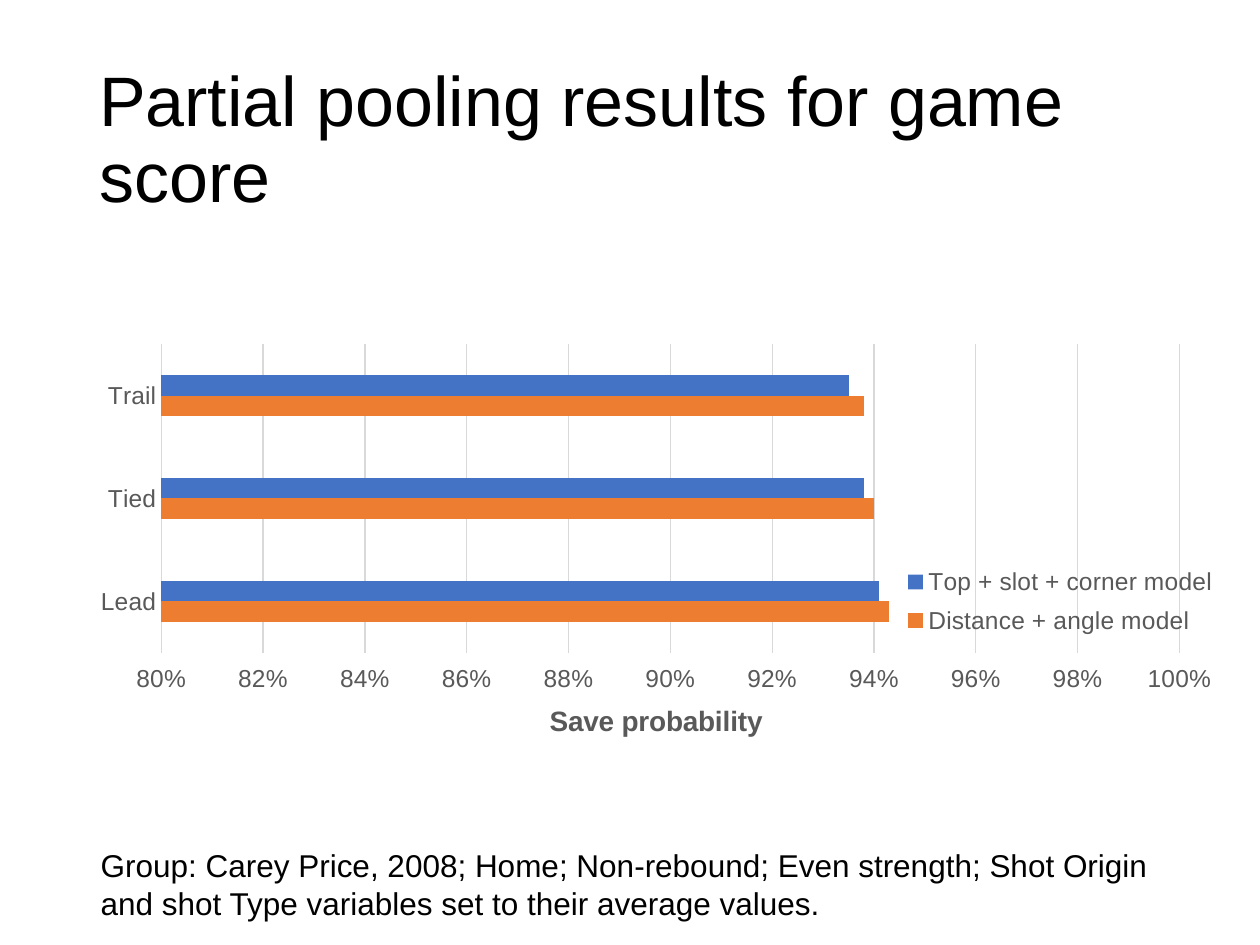
from pptx import Presentation
from pptx.chart.data import CategoryChartData as ChartData
from pptx.dml.color import RGBColor as RGB
from pptx.enum.chart import XL_CHART_TYPE as Kind, XL_LEGEND_POSITION as Side, XL_TICK_MARK as Tick
from pptx.enum.text import MSO_ANCHOR as Anchor
from pptx.oxml import parse_xml
from pptx.oxml.ns import nsdecls, qn
from pptx.util import Cm, Pt

HUES = {"ink": "000000", "gray": "595959", "grid": "D9D9D9",
        "blue": "4472C4", "orange": "ED7D31"}
FACE = "Arial"
CATS = ["Lead", "Tied", "Trail"]
SERIES = [
    ("Distance + angle model", "orange", (0.943, 0.94, 0.938)),
    ("Top + slot + corner model", "blue", (0.941, 0.938, 0.935)),
]


def hue(name):
    return RGB.from_string(HUES[name])


def style(font, size, color, face=FACE, bold=False):
    font.size = Pt(size)
    font.name = face
    font.bold = bold
    font.color.rgb = hue(color)


def add_text(slide, box, text, size, anchor=Anchor.TOP, spacing=1.0):
    frame = slide.shapes.add_textbox(*map(Cm, box)).text_frame
    frame.word_wrap = True
    frame.vertical_anchor = anchor
    frame.text = text
    para = frame.paragraphs[0]
    para.line_spacing = spacing
    style(para.runs[0].font, size, "ink")


def set_layout(parent, index, area, inner=False):
    for old in parent.findall(qn("c:layout")):
        parent.remove(old)
    target = '<c:layoutTarget val="inner"/>' if inner else ""
    modes = "".join(f'<c:{key}Mode val="edge"/>' for key in "xy")
    sizes = "".join(f'<c:{key} val="{val}"/>' for key, val in zip("xywh", area))
    parent.insert(index, parse_xml(
        f'<c:layout {nsdecls("c")}><c:manualLayout>{target}{modes}{sizes}'
        "</c:manualLayout></c:layout>"))


def style_axes(chart):
    cat, val = chart.category_axis, chart.value_axis
    for axis in (cat, val):
        style(axis.tick_labels.font, 14, "gray")
        axis.minor_tick_mark = Tick.NONE
    cat.major_tick_mark = Tick.NONE
    cat.has_major_gridlines = False
    val.major_tick_mark = Tick.OUTSIDE
    val.has_major_gridlines = True
    val.minimum_scale, val.maximum_scale, val.major_unit = 0.8, 1, 0.02
    val.tick_labels.number_format = "0%"
    val.tick_labels.number_format_is_linked = False
    val.format.line.fill.background()
    for line in (cat.format.line, val.major_gridlines.format.line):
        line.color.rgb = hue("grid")
        line.width = Pt(0.75)
    frame = val.axis_title.text_frame
    frame.text = "Save probability"
    style(frame.paragraphs[0].runs[0].font, 16, "gray", bold=True)


def add_bars(slide, box):
    data = ChartData(number_format="0.0%")
    data.categories = CATS
    for name, _, vals in SERIES:
        data.add_series(name, vals)
    chart = slide.shapes.add_chart(Kind.BAR_CLUSTERED, *map(Cm, box), data).chart
    style(chart.font, 10, "ink", "Calibri")
    chart.has_title = False
    plot = chart.plots[0]
    plot.gap_width = 300
    plot.overlap = 0
    plot.vary_by_categories = False
    for bar, (_, color, _) in zip(plot.series, SERIES):
        bar.format.fill.solid()
        bar.format.fill.fore_color.rgb = hue(color)
    style_axes(chart)
    chart.has_legend = True
    legend = chart.legend
    legend.position = Side.RIGHT
    legend.include_in_layout = True
    style(legend.font, 14, "gray")
    set_layout(legend._element, 1, (0.72, 0.55, 0.28, 0.21))
    area = chart._chartSpace.find(".//" + qn("c:plotArea"))
    set_layout(area, 0, (0.075, 0.04, 0.889, 0.739), inner=True)


def main():
    deck = Presentation()
    deck.slide_width, deck.slide_height = Cm(25.4), Cm(19.05)
    slide = deck.slides.add_slide(deck.slide_layouts[6])
    add_text(slide, (1.75, 1.02, 21.9, 3.68), "Partial pooling results for game score",
             40, Anchor.MIDDLE, 0.9)
    add_text(slide, (1.78, 16.94, 22.58, 1.8),
             "Group: Carey Price, 2008; Home; Non-rebound; Even strength; "
             "Shot Origin and shot Type variables set to their average values.", 18)
    add_bars(slide, (1.52, 6.6, 23.09, 8.43))
    deck.save("out.pptx")


if __name__ == "__main__":
    main()
